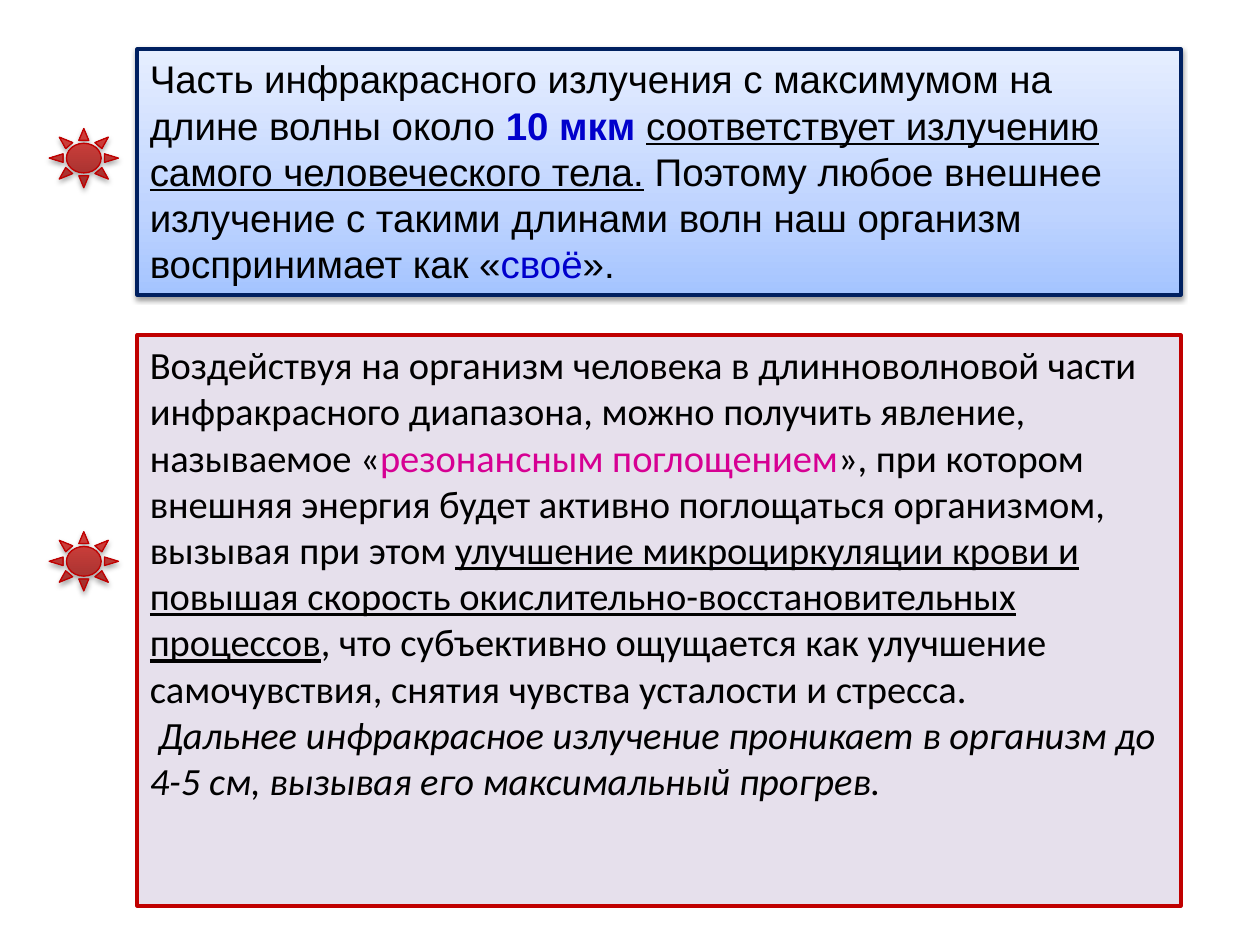
from copy import deepcopy
from dataclasses import dataclass

from lxml import etree
from pptx import Presentation
from pptx import util as u
from pptx.dml.color import RGBColor
from pptx.enum import shapes, text
from pptx.oxml.ns import qn


@dataclass(frozen=True)
class Theme:
    ink: str = "000000"
    blue: str = "0000CC"
    pink: str = "D60093"
    navy: str = "002060"
    red: str = "C00000"
    lilac: str = "E6E0EC"
    sky: tuple = ((0, "A4C4FF"), (0.35, "BFD4FF"), (1, "E6EEFF"))
    ember: tuple = ((0, "9C2F2D"), (0.8, "CB3E3A"), (1, "CE3B37"))
    body_size: float = 22
    box_line: float = 2.25
    sun_line: float = 0.75


THEME = Theme()
BOX_LEFT, BOX_WIDTH = 1.09, 8.28
SUN_LEFT, SUN_WIDTH, SUN_HEIGHT = 0.39, 0.55, 0.47


def color(value):
    return RGBColor.from_string(value)


def fill_gradient(shape, stops):
    """Fill with (position, colour) stops running from bottom to top."""
    shape.fill.gradient()
    shape.fill.gradient_angle = 90
    stop_list = shape.element.spPr.find(".//" + qn("a:gsLst"))
    while len(stop_list) < len(stops):
        stop_list.append(deepcopy(stop_list[-1]))
    for stop, (position, value) in zip(shape.fill.gradient_stops, stops):
        stop.position = position
        stop.color.rgb = color(value)


def add_shadow(shape, opacity, distance):
    """Drop a soft black shadow straight down."""
    effects = shape.element.spPr.find(qn("a:effectLst"))
    shadow = etree.SubElement(
        effects, qn("a:outerShdw"), blurRad=str(u.Pt(3.1)),
        dist=str(u.Pt(distance)), dir="5400000", rotWithShape="0")
    black = etree.SubElement(shadow, qn("a:srgbClr"), val="000000")
    etree.SubElement(black, qn("a:alpha"), val=str(opacity * 1000))


def add_figure(page, kind, left, top, width, height, fill, line, line_width):
    """Add a preset shape; fill is one colour or a tuple of gradient stops."""
    shape = page.shapes.add_shape(
        kind, u.Inches(left), u.Inches(top), u.Inches(width), u.Inches(height))
    shape.shadow.inherit = False
    if isinstance(fill, str):
        shape.fill.solid()
        shape.fill.fore_color.rgb = color(fill)
    else:
        fill_gradient(shape, fill)
    shape.line.color.rgb = color(line)
    shape.line.width = u.Pt(line_width)
    return shape


def add_box(page, top, height, fill, line):
    box = add_figure(page, shapes.MSO_SHAPE.RECTANGLE, BOX_LEFT, top,
                     BOX_WIDTH, height, fill, line, THEME.box_line)
    box.text_frame.word_wrap = True
    box.text_frame.vertical_anchor = text.MSO_ANCHOR.TOP
    return box


def add_sun(page, top):
    sun = add_figure(page, shapes.MSO_SHAPE.SUN, SUN_LEFT, top,
                     SUN_WIDTH, SUN_HEIGHT, THEME.ember, THEME.red, THEME.sun_line)
    add_shadow(sun, 35, 1.8)


def add_span(para, words, font, ink=THEME.ink, bold=False, italic=False,
             underline=False):
    span = para.add_run()
    span.text = words
    span.font.name = font
    span.font.size = u.Pt(THEME.body_size)
    span.font.color.rgb = color(ink)
    span.font.bold = bold
    span.font.italic = italic
    span.font.underline = underline


def write_paragraphs(box, font, paragraphs):
    """Write paragraphs, each a list of (words, format) pairs."""
    frame = box.text_frame
    for index, spans in enumerate(paragraphs):
        para = frame.add_paragraph() if index else frame.paragraphs[0]
        para.alignment = text.PP_ALIGN.LEFT
        for words, style in spans:
            add_span(para, words, font, **style)


WAVELENGTH = [[
    ("Часть инфракрасного излучения с максимумом на длине волны около ", {}),
    ("10 мкм ", {"ink": THEME.blue, "bold": True}),
    ("соответствует излучению самого человеческого тела.", {"underline": True}),
    (" Поэтому любое внешнее излучение с такими длинами волн наш организм "
     "воспринимает как «", {}),
    ("своё", {"ink": THEME.blue}),
    ("».", {}),
]]

RESONANCE = [
    [
        ("Воздействуя на организм человека в длинноволновой части инфракрасного "
         "диапазона, можно получить явление, называемое «", {}),
        ("резонансным поглощением", {"ink": THEME.pink}),
        ("», при котором внешняя энергия будет активно поглощаться организмом, "
         "вызывая при этом ", {}),
        ("улучшение микроциркуляции крови и повышая скорость "
         "окислительно-восстановительных процессов", {"underline": True}),
        (", что субъективно ощущается как улучшение самочувствия, снятия чувства "
         "усталости и стресса.", {}),
    ],
    [
        (" ", {}),
        ("Дальнее инфракрасное излучение проникает в организм до 4-5 см, вызывая "
         "его максимальный прогрев.", {"italic": True}),
    ],
]


def main():
    deck = Presentation()
    deck.slide_width, deck.slide_height = u.Inches(10), u.Inches(7.5)
    page = deck.slides.add_slide(deck.slide_layouts[6])

    wavelength_box = add_box(page, 0.39, 1.95, THEME.sky, THEME.navy)
    add_shadow(wavelength_box, 38, 1.6)
    write_paragraphs(wavelength_box, "Arial", WAVELENGTH)

    resonance_box = add_box(page, 2.66, 4.53, THEME.lilac, THEME.red)
    write_paragraphs(resonance_box, "Calibri", RESONANCE)

    for top in (1.02, 4.22):
        add_sun(page, top)

    deck.save("out.pptx")


if __name__ == "__main__":
    main()
